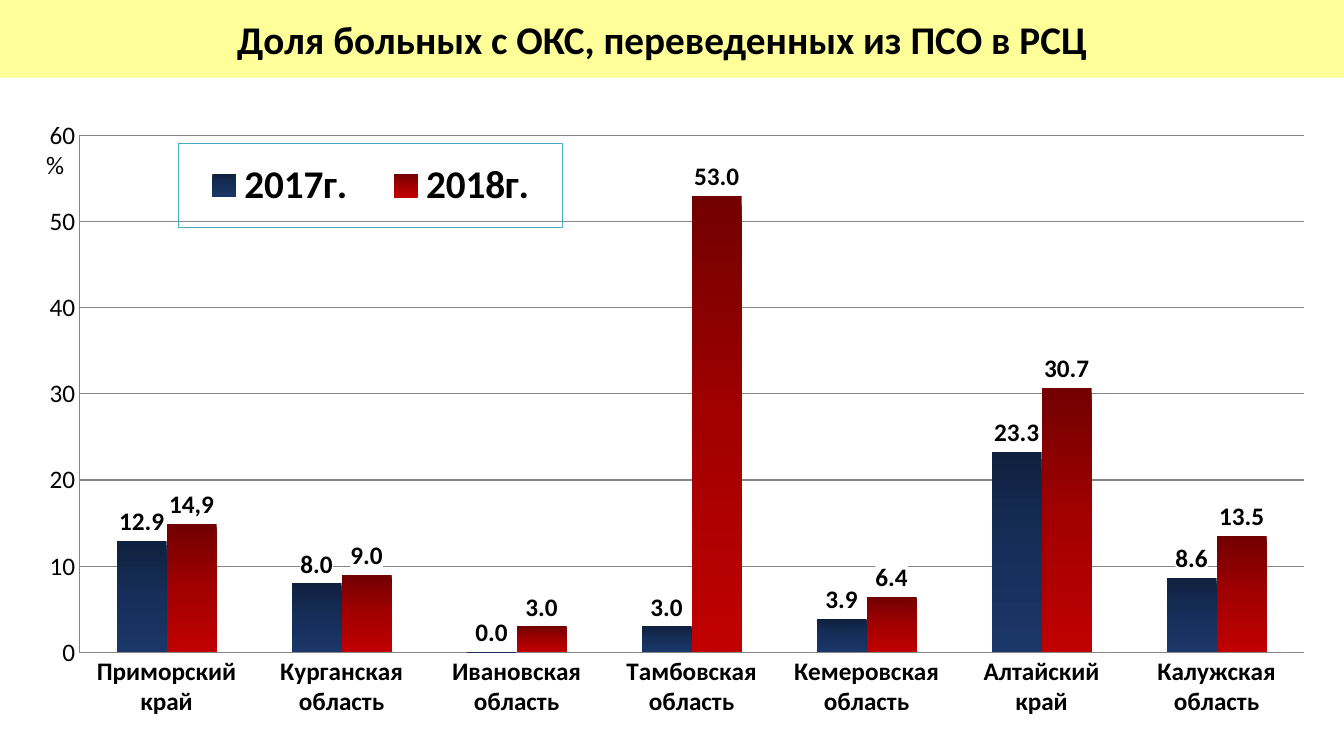
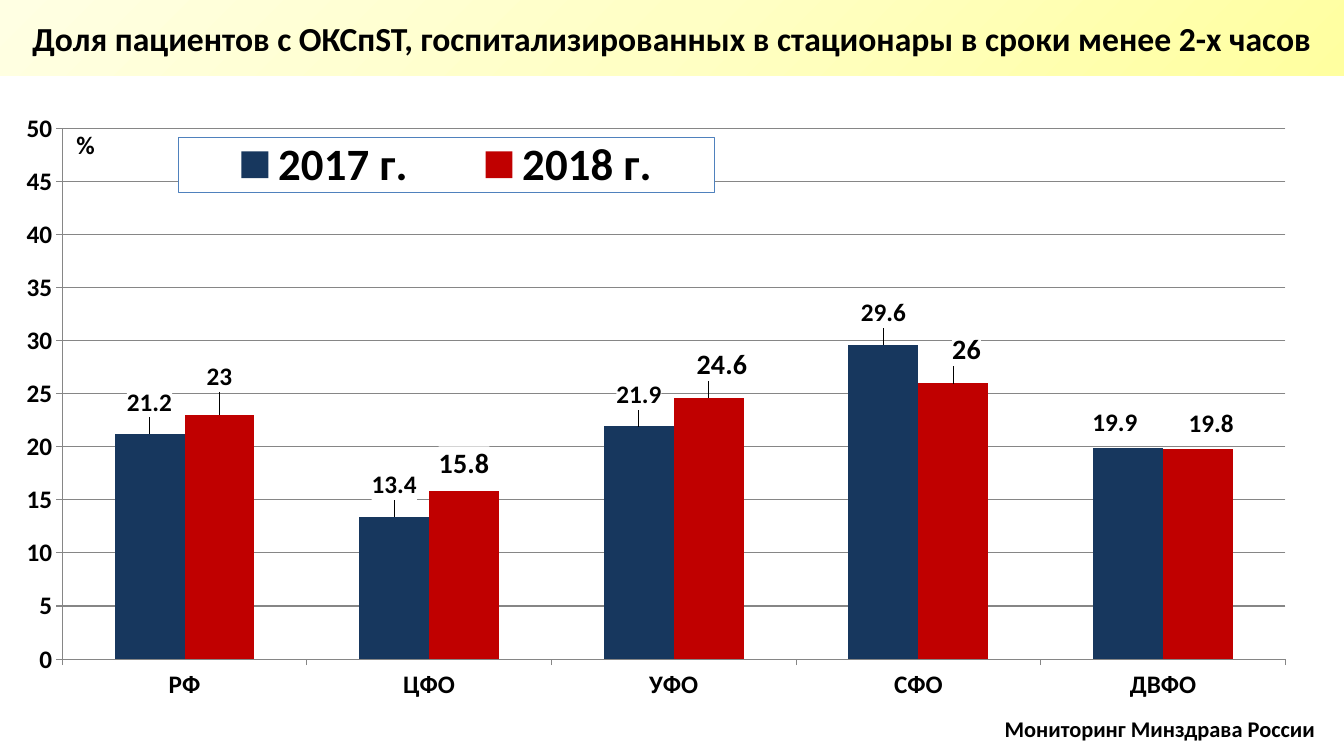
from copy import deepcopy

from pptx import Presentation
from pptx import util as u
from pptx.chart.data import CategoryChartData
from pptx.dml.color import RGBColor
from pptx.enum import chart as charts, text
from pptx.oxml import parse_xml
from pptx.oxml.ns import nsdecls, qn

COLORS = {
    "text": "000000",
    "white": "FFFFFF",
    "band": "FFFF99",
    "grid": "868686",
    "teal": "4BACC6",
    "blue": "4F81BD",
    "navy": "17375E",
    "red": "C00000",
}
BAND_GRADIENT = ("FFFFA0", "FFFFC5", "FFFFE3")
NAVY_GRADIENT = ("10213F", "162E59", "1B3769")
RED_GRADIENT = ("720000", "A20000", "C00000")
FONT = "Calibri"
SLIDE_WIDTH = 13.33


def rgb(name):
    """Return a palette colour."""
    return RGBColor.from_string(COLORS[name])


def style_font(font, size, bold=False):
    """Apply the shared typeface and text colour."""
    font.name = FONT
    font.size = u.Pt(size)
    font.bold = bold
    font.color.rgb = rgb("text")


def paint(fill, element, color, angle=0):
    """Fill with a palette colour or with a three-stop gradient."""
    if isinstance(color, str):
        fill.solid()
        fill.fore_color.rgb = rgb(color)
        return
    fill.gradient()
    fill.gradient_angle = 360 - angle
    stop_list = element.find(".//" + qn("a:gsLst"))
    stop_list.insert(1, deepcopy(stop_list[0]))
    for index, (stop, value) in enumerate(zip(fill.gradient_stops, color)):
        stop.position = index / 2
        stop.color.rgb = RGBColor.from_string(value)


def layout_xml(values, inner=False, absolute=True):
    """Build a manual chart layout from x, y and optional width and height."""
    parts = ['<c:layoutTarget val="inner"/>'] if inner else []
    if absolute:
        parts += ['<c:xMode val="edge"/>', '<c:yMode val="edge"/>']
    parts += [f'<c:{key} val="{value}"/>' for key, value in zip("xywh", values)]
    return parse_xml(
        f'<c:layout {nsdecls("c")}><c:manualLayout>{"".join(parts)}'
        "</c:manualLayout></c:layout>"
    )


def box_xml(fill=None, line=None):
    """Build the fill and outline of a chart part."""

    def solid(name):
        return f'<a:solidFill><a:srgbClr val="{COLORS[name]}"/></a:solidFill>'

    inside = solid(fill) if fill else "<a:noFill/>"
    outline = solid(line) if line else "<a:noFill/>"
    return parse_xml(
        f'<c:spPr {nsdecls("c", "a")}>{inside}<a:ln w="9525">{outline}</a:ln></c:spPr>'
    )


def add_title(slide, wording, height, size, color, right_margin=0.1):
    """Turn the title placeholder into the yellow band."""
    title = slide.shapes.title
    title.left = title.top = 0
    title.width, title.height = u.Inches(SLIDE_WIDTH), u.Inches(height)
    paint(title.fill, title._element, color, 225)
    frame = title.text_frame
    frame.text = wording
    frame.word_wrap = True
    frame.auto_size = text.MSO_AUTO_SIZE.NONE
    frame.vertical_anchor = text.MSO_ANCHOR.MIDDLE
    frame.margin_right = u.Inches(right_margin)
    paragraph = frame.paragraphs[0]
    paragraph.alignment = text.PP_ALIGN.CENTER
    style_font(paragraph.runs[0].font, size, True)


def add_caption(slide, box, wording, size, bold, align=text.PP_ALIGN.LEFT, wrap=False):
    """Add a one-line text box."""
    frame = slide.shapes.add_textbox(*map(u.Inches, box)).text_frame
    frame.text = wording
    frame.word_wrap = wrap
    paragraph = frame.paragraphs[0]
    paragraph.alignment = align
    style_font(paragraph.runs[0].font, size, bold)


def style_axes(chart, top, step, tick, bold_values):
    """Format both axes and the grid lines."""
    values = chart.value_axis
    values.minimum_scale, values.maximum_scale, values.major_unit = 0, top, step
    values.has_major_gridlines = True
    values.major_gridlines.format.line.color.rgb = rgb("grid")
    values.tick_labels.number_format = "General"
    values.tick_labels.number_format_is_linked = False
    for axis, bold in ((chart.category_axis, True), (values, bold_values)):
        axis.major_tick_mark = tick
        axis.minor_tick_mark = charts.XL_TICK_MARK.NONE
        axis.format.line.color.rgb = rgb("grid")
        style_font(axis.tick_labels.font, 18, bold)


def style_legend(chart, size, place, line, fill=None):
    """Frame the legend and place it over the plot."""
    chart.has_legend = True
    legend = chart.legend
    legend.position = charts.XL_LEGEND_POSITION.RIGHT
    legend.include_in_layout = False
    style_font(legend.font, size, True)
    element = legend._element
    element.find(qn("c:overlay")).addprevious(layout_xml(place))
    element.find(qn("c:txPr")).addprevious(box_xml(fill, line))


def label_series(series, number_format, point_labels, custom):
    """Show values, with sizes and offsets or wording for single points."""
    labels = series.data_labels
    labels.show_value = True
    labels.number_format = number_format
    labels.number_format_is_linked = False
    labels.position = charts.XL_LABEL_POSITION.OUTSIDE_END
    style_font(labels.font, 18, True)
    for index, (size, *offset) in enumerate(point_labels):
        label = series.points[index].data_label
        style_font(label.font, size, True)
        label.position = charts.XL_LABEL_POSITION.OUTSIDE_END
        element = series._element.findall(".//" + qn("c:dLbl"))[index]
        element.insert(1, layout_xml(offset, absolute=False))
    for index, wording in custom.items():
        label = series.points[index].data_label
        label.text_frame.text = wording
        style_font(label.text_frame.paragraphs[0].runs[0].font, 18, True)
        label.position = charts.XL_LABEL_POSITION.OUTSIDE_END
    for element in series._element.iter(qn("c:dLbls"), qn("c:dLbl")):
        text_properties = element.find(qn("c:txPr"))
        if text_properties is not None:
            text_properties.addprevious(box_xml("white"))


def add_columns(slide, box, plot_place, categories, series_list, number_format="General"):
    """Add a clustered column chart; each series is a dict."""
    data = CategoryChartData()
    data.categories = categories
    for item in series_list:
        data.add_series(item["name"], item["values"])
    chart = slide.shapes.add_chart(
        charts.XL_CHART_TYPE.COLUMN_CLUSTERED, *map(u.Inches, box), data
    ).chart
    chart.has_title = False
    style_font(chart.font, 18)
    plot = chart.plots[0]
    plot.gap_width, plot.overlap = 150, 0
    plot.vary_by_categories = False
    for series, item in zip(plot.series, series_list):
        paint(series.format.fill, series._element, item["color"], 90)
        series.invert_if_negative = False
        label_series(series, number_format, item.get("points", ()), item.get("custom", {}))
    area = chart._chartSpace.find(".//" + qn("c:plotArea"))
    for layout in area.findall(qn("c:layout")):
        area.remove(layout)
    area.insert(0, layout_xml(plot_place, inner=True))
    return chart


def build_transfers(slide):
    """Build the slide on transferred patients by region."""
    add_title(slide, "Доля больных с ОКС, переведенных из ПСО в РСЦ", 0.77, 28, "band", 0.3)
    chart = add_columns(
        slide,
        (0.22, 1.03, 12.83, 6.47),
        (0.044, 0.049, 0.947, 0.792),
        ["Приморский край", "Курганская область", "Ивановская область",
         "Тамбовская область", "Кемеровская область", "Алтайский край",
         "Калужская область"],
        [
            {"name": "2017г.", "values": (12.9, 8, 0, 3, 3.9, 23.3, 8.6),
             "color": NAVY_GRADIENT},
            {"name": "2018г.", "values": (14.9, 9, 3, 53, 6.4, 30.7, 13.5),
             "color": RED_GRADIENT, "custom": {0: "14,9"}},
        ],
        "#,##0.0",
    )
    style_axes(chart, 60, 10, charts.XL_TICK_MARK.NONE, False)
    style_legend(chart, 28, (0.121, 0.061, 0.297, 0.129), "teal")
    add_caption(slide, (0.36, 1.43, 0.38, 0.4), "%", 18, False)


def build_admissions(slide):
    """Build the slide on early admissions by federal district."""
    add_title(
        slide,
        "Доля пациентов с ОКСпST, госпитализированных в стационары в сроки менее 2-х часов",
        0.75, 24, BAND_GRADIENT,
    )
    chart = add_columns(
        slide,
        (0, 0.99, 13.13, 6.25),
        (0.047, 0.045, 0.924, 0.843),
        ["РФ", "ЦФО", "УФО", "СФО", "ДВФО"],
        [
            {"name": "2017 г.", "values": (21.2, 13.4, 21.9, 29.6, 19.9), "color": "navy",
             "points": ((18, 0, -0.02), (18, 0, -0.02), (18, 0, -0.02),
                        (18, 0, -0.02), (18, -0.01, -0.01))},
            {"name": "2018 г.", "values": (23, 15.8, 24.6, 26, 19.8), "color": "red",
             "points": ((18, 0, -0.03), (20, 0, -0.01), (20, 0.01, -0.02),
                        (20, 0.01, -0.02), (18, 0.01, -0.01))},
        ],
    )
    style_axes(chart, 50, 5, charts.XL_TICK_MARK.OUTSIDE, True)
    style_legend(chart, 32, (0.135, 0.059, 0.405, 0.087), "blue", "white")
    add_caption(slide, (7.26, 7.05, 5.88, 0.37), "Мониторинг Минздрава России",
                16, True, text.PP_ALIGN.RIGHT, True)
    add_caption(slide, (0.66, 1.23, 0.39, 0.4), "%", 18, True)


def main():
    """Create and save the presentation."""
    presentation = Presentation()
    presentation.slide_width = u.Inches(SLIDE_WIDTH)
    presentation.slide_height = u.Inches(7.5)
    for build in (build_transfers, build_admissions):
        build(presentation.slides.add_slide(presentation.slide_layouts[5]))
    presentation.save("out.pptx")


if __name__ == "__main__":
    main()
